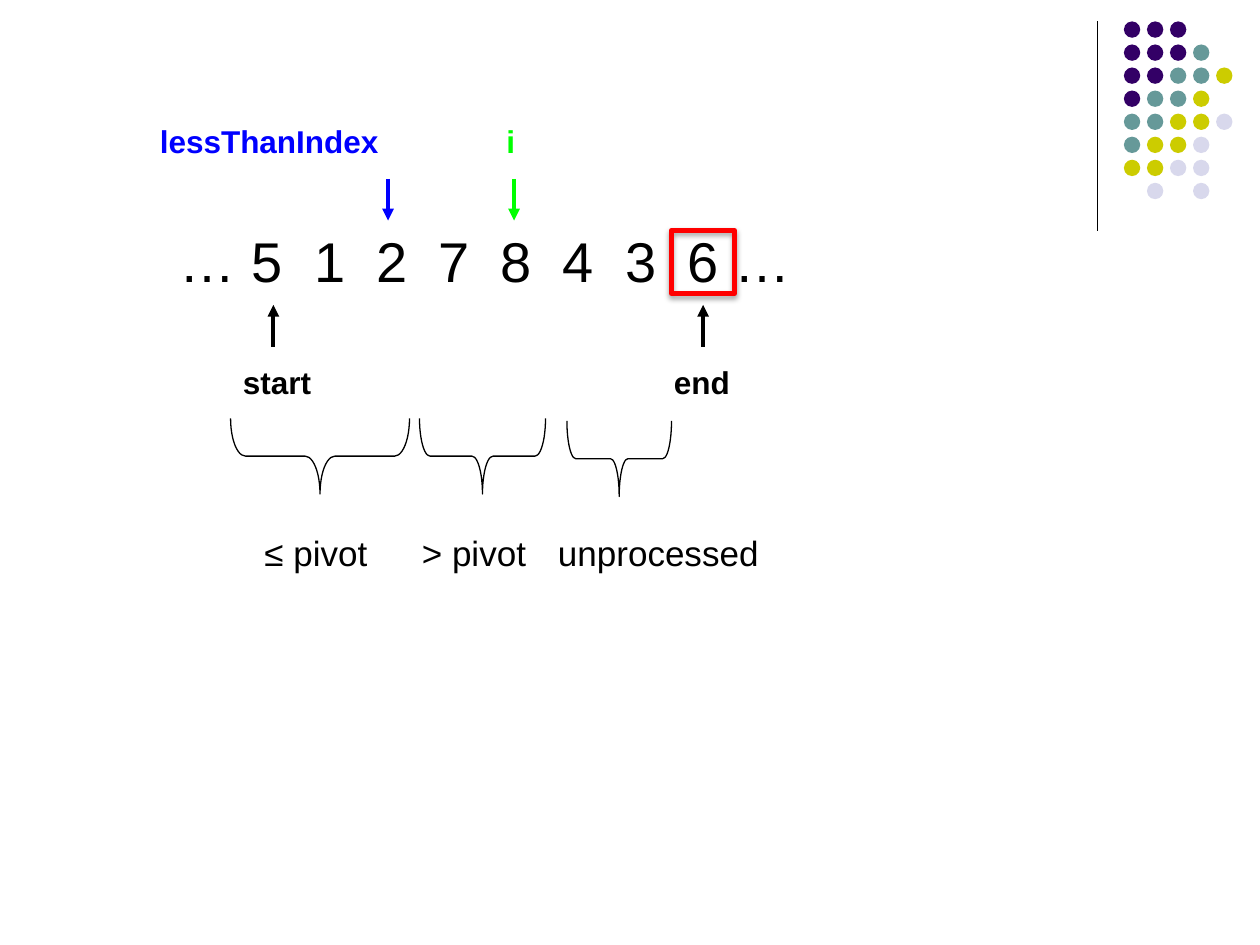
from pptx import Presentation
from pptx.dml.color import RGBColor
from pptx.enum.shapes import MSO_CONNECTOR, MSO_SHAPE
from pptx.oxml import parse_xml
from pptx.oxml.ns import nsdecls, qn
from pptx.util import Inches, Pt

STRAIGHT = MSO_CONNECTOR.STRAIGHT
OVAL, RECTANGLE, BRACE = MSO_SHAPE.OVAL, MSO_SHAPE.RECTANGLE, MSO_SHAPE.LEFT_BRACE
FONT = "Arial"
BLACK, BLUE, GREEN, RED = "000000", "0000FF", "00FF00", "FF0000"

# Content: array under partition, its index markers and its regions
ARRAY = "… 5\t1\t2\t7\t8\t4\t3\t6 …"
ABOVE = dict(label_top=0.92, tail=1.42, tip=1.75)
BELOW = dict(label_top=2.83, tail=2.75, tip=2.42)
# label, colour, arrow x, label left, label width, side
MARKERS = [
    ("lessThanIndex", BLUE, 3.08, 1.17, 2, ABOVE),
    ("i", GREEN, 4.08, 3.92, 0.42, ABOVE),
    ("start", BLACK, 2.17, 1.83, 1.33, BELOW),
    ("end", BLACK, 5.58, 5.25, 0.75, BELOW),
]
# label, label left, label width, brace left, brace top, brace span, brace curve
REGIONS = [
    ("≤ pivot", 2, 1.17, 1.83, 3.32, 1.42, 0.197),
    ("> pivot", 3.25, 1.17, 3.33, 3.32, 1, 0.139),
    ("unprocessed", 4.33, 2, 4.5, 3.34, 0.83, 0.116),
]
# Corner ornament: one letter per dot colour
DOT_COLORS = {"P": "330066", "T": "669999", "Y": "CCCC00", "L": "D8D8EC"}
DOT_ROWS = ["PPP", "PPPT", "PPTTY", "PTTY", "TTYYL", "TYYL", "YYLL", " L L"]
DOT_LEFT, DOT_TOP, DOT_PITCH, DOT_SIZE = 8.92, 0.17, 0.183, 0.13
BRACE_DEPTH = 0.6
DIGIT_LEFT, DIGIT_PITCH = 0.57, 0.494

prs = Presentation()
prs.slide_width, prs.slide_height = Inches(10), Inches(7.5)
slide = prs.slides.add_slide(prs.slide_layouts[6])


def rgb(color):
    return RGBColor.from_string(color)


def add_text(text, left, top, width, height, size=18, color=BLACK, bold=False):
    box = slide.shapes.add_textbox(*map(Inches, (left, top, width, height)))
    box.text_frame.word_wrap = True
    paragraph = box.text_frame.paragraphs[0]
    paragraph.space_before = Pt(size * 0.1)
    run = paragraph.add_run()
    run.text = text
    run.font.name, run.font.size, run.font.bold = FONT, Pt(size), bold
    run.font.color.rgb = rgb(color)
    return paragraph


def add_shape(kind, left, top, width, height, fill=None, line=None, weight=0.75):
    shape = slide.shapes.add_shape(kind, *map(Inches, (left, top, width, height)))
    shape.shadow.inherit = False
    if fill:
        shape.fill.solid()
        shape.fill.fore_color.rgb = rgb(fill)
    else:
        shape.fill.background()
    if line:
        shape.line.color.rgb = rgb(line)
        shape.line.width = Pt(weight)
    else:
        shape.line.fill.background()
    return shape


def add_line(x, start, end, color=BLACK, weight=0.75, arrow=False):
    line = slide.shapes.add_connector(STRAIGHT, *map(Inches, (x, start, x, end)))
    line.line.color.rgb = rgb(color)
    line.line.width = Pt(weight)
    if arrow:
        head = parse_xml(f'<a:tailEnd {nsdecls("a")} type="triangle"/>')
        line.line._get_or_add_ln().append(head)
    line._element.spPr.append(parse_xml(f'<a:effectLst {nsdecls("a")}/>'))


# Corner ornament
add_line(8.71, 0.17, 1.83)
for row, dots in enumerate(DOT_ROWS):
    for column, dot in enumerate(dots):
        if dot in DOT_COLORS:
            add_shape(OVAL, DOT_LEFT + column * DOT_PITCH, DOT_TOP + row * DOT_PITCH,
                      DOT_SIZE, DOT_SIZE, fill=DOT_COLORS[dot])

# Array, with one tab stop per element
array = add_text(ARRAY, 1.33, 1.75, 5.17, 0.63, size=32)
stops = "".join(f'<a:tab pos="{Inches(DIGIT_LEFT + i * DIGIT_PITCH)}" algn="l"/>'
                for i in range(1, ARRAY.count("\t") + 1))
array._p.get_or_add_pPr().append(
    parse_xml(f'<a:tabLst {nsdecls("a")}>{stops}</a:tabLst>'))

# Index markers
for label, color, x, left, width, side in MARKERS:
    add_line(x, side["tail"], side["tip"], color, 2.25, arrow=True)
    add_text(label, left, side["label_top"], width, 0.4, color=color, bold=True)

# Frame around the pivot, with a soft shadow below
pivot_frame = add_shape(RECTANGLE, 5.33, 1.83, 0.5, 0.5, line=RED, weight=3)
pivot_frame._element.spPr.find(qn("a:effectLst")).append(parse_xml(
    f'<a:outerShdw {nsdecls("a")} blurRad="{Pt(3.1)}" dist="{Pt(1.8)}" dir="5400000" '
    f'rotWithShape="0"><a:srgbClr val="{BLACK}"><a:alpha val="35000"/></a:srgbClr>'
    '</a:outerShdw>'))

# Regions: braces turned to point down at their labels
for label, left, width, brace_left, brace_top, span, curve in REGIONS:
    shift = (span - BRACE_DEPTH) / 2
    brace = add_shape(BRACE, brace_left + shift, brace_top - shift,
                      BRACE_DEPTH, span, line=BLACK)
    brace.rotation = 270
    brace.adjustments[0] = curve
    add_text(label, left, 4.17, width, 0.43, size=20)

prs.save("out.pptx")
